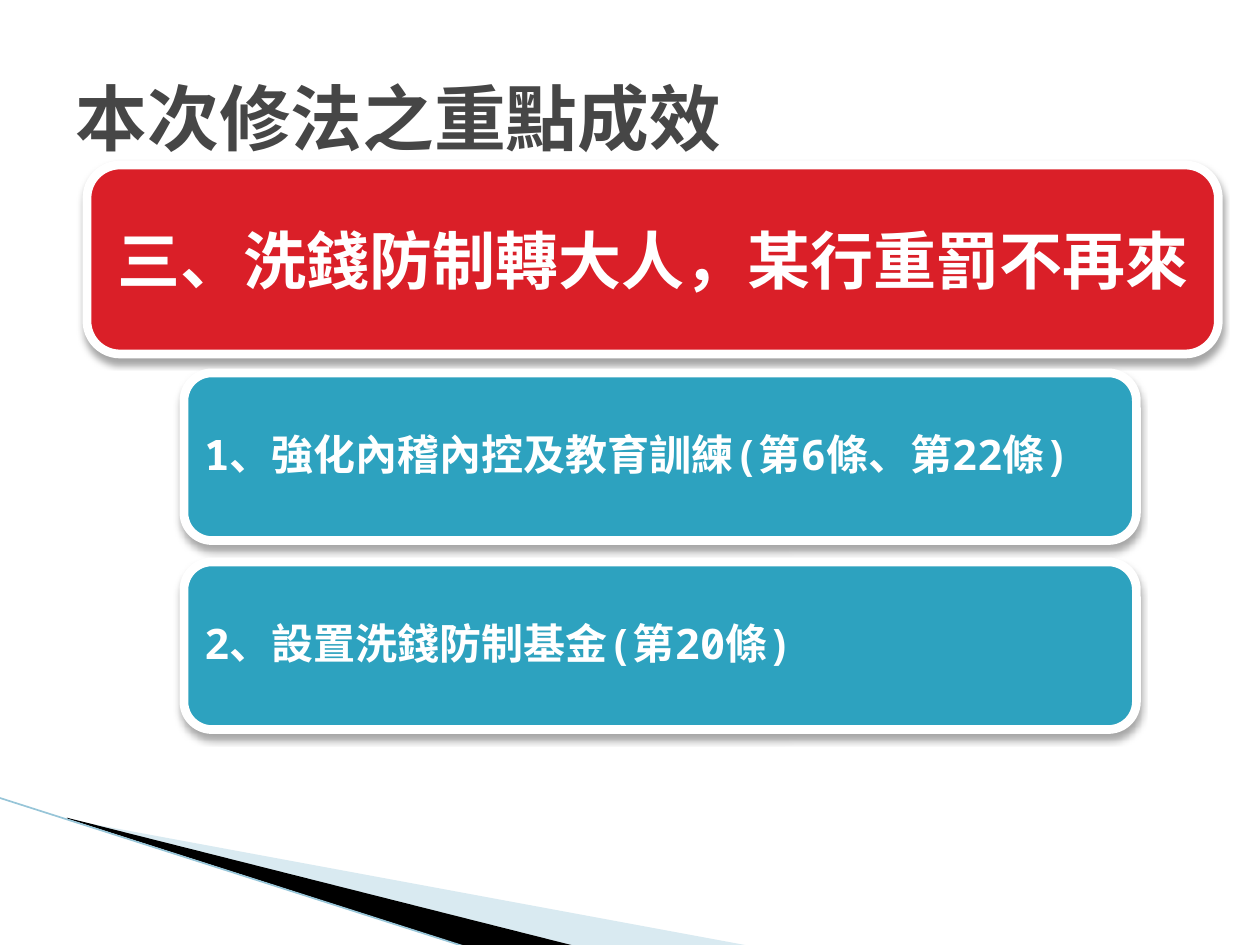
from lxml import etree
from pptx import Presentation
from pptx.dml.color import RGBColor
from pptx.enum import shapes, text
from pptx.oxml.ns import qn
from pptx.util import Pt

FONT = "Noto Sans Mono"
COLORS = {
    "title": "464646",
    "white": "FFFFFF",
    "headline": "DA1F28",
    "card": "2DA2BF",
    "pale": "A0CBDC",
    "black": "000000",
    "edge": "97C5D8",
}


def rgb(name):
    return RGBColor.from_string(COLORS[name])


def add_child(parent, tag, **attributes):
    return etree.SubElement(parent, qn(tag), attributes)


def write_text(shape, words, size, color, alignment, spacing=1.0):
    frame = shape.text_frame
    frame.word_wrap = True
    frame.auto_size = text.MSO_AUTO_SIZE.NONE
    frame.vertical_anchor = text.MSO_ANCHOR.MIDDLE
    paragraph = frame.paragraphs[0]
    paragraph.text = words
    paragraph.alignment = alignment
    paragraph.line_spacing = spacing
    font = paragraph.font
    font.name, font.size, font.bold = FONT, Pt(size), True
    font.color.rgb = rgb(color)
    return frame


def add_wedge(slide, points, color, opacity=None):
    builder = slide.shapes.build_freeform(Pt(points[0][0]), Pt(points[0][1]), scale=1.0)
    builder.add_line_segments([(Pt(x), Pt(y)) for x, y in points[1:]], close=True)
    shape = builder.convert_to_shape()
    shape.shadow.inherit = False
    shape.fill.solid()
    shape.fill.fore_color.rgb = rgb(color)
    shape.line.fill.background()
    if opacity is not None:
        fill_color = shape._element.spPr.find(qn("a:solidFill"))[0]
        add_child(fill_color, "a:alpha", val=str(opacity * 1000))


def add_edge(slide, start, end):
    line = slide.shapes.add_connector(
        shapes.MSO_CONNECTOR.STRAIGHT, *(Pt(value) for value in start + end))
    line.line.color.rgb = rgb("edge")
    line.line.width = Pt(0.95)
    add_child(line._element.spPr, "a:effectLst")


def add_drop_shadow(shape):
    shape.shadow.inherit = False
    effects = shape._element.spPr.find(qn("a:effectLst"))
    shadow = add_child(effects, "a:outerShdw", blurRad=str(Pt(4)), dist=str(Pt(3)),
                       dir="5400000", rotWithShape="0")
    color = add_child(shadow, "a:srgbClr", val=COLORS["black"])
    add_child(color, "a:alpha", val="35000")


def add_card(slide, box, color, rounding):
    card = slide.shapes.add_shape(
        shapes.MSO_SHAPE.ROUNDED_RECTANGLE, *(Pt(value) for value in box))
    card.adjustments[0] = rounding
    card.fill.solid()
    card.fill.fore_color.rgb = rgb(color)
    card.line.color.rgb = rgb("white")
    card.line.width = Pt(5)
    add_drop_shadow(card)
    return card


def main():
    presentation = Presentation()
    presentation.slide_width, presentation.slide_height = Pt(720), Pt(540)
    slide = presentation.slides.add_slide(presentation.slide_layouts[5])

    # Title
    title = slide.shapes.title
    title.left, title.top, title.width, title.height = Pt(36), Pt(21.6), Pt(648), Pt(90)
    write_text(title, "本次修法之重點成效", 41, "title", text.PP_ALIGN.LEFT)

    # Corner decoration
    add_wedge(slide, [(39.6, 468.5), (428.4, 540.5), (328.3, 540.5), (39.6, 468)], "pale", 40)
    add_wedge(slide, [(38.2, 467.3), (329, 540.7), (267.8, 541.4), (38.9, 468)], "black")
    add_edge(slide, (-0.7, 455.8), (267.1, 541.4))

    # Headline
    headline = add_card(slide, (49.7, 94.3, 646.5, 108), "headline", 0.175)
    write_text(headline, "三、洗錢防制轉大人，某行重罰不再來", 36, "white", text.PP_ALIGN.CENTER)

    # Measures
    measures = ["1、強化內稽內控及教育訓練(第6條、第22條)", "2、設置洗錢防制基金(第20條)"]
    for index, measure in enumerate(measures):
        card = add_card(slide, (105.1, 213.1 + index * 108, 544.3, 95.8), "card", 0.167)
        frame = write_text(card, measure, 24, "white", text.PP_ALIGN.LEFT, 0.9)
        frame.margin_top = frame.margin_bottom = Pt(7.2)


    presentation.save("out.pptx")


if __name__ == "__main__":
    main()
